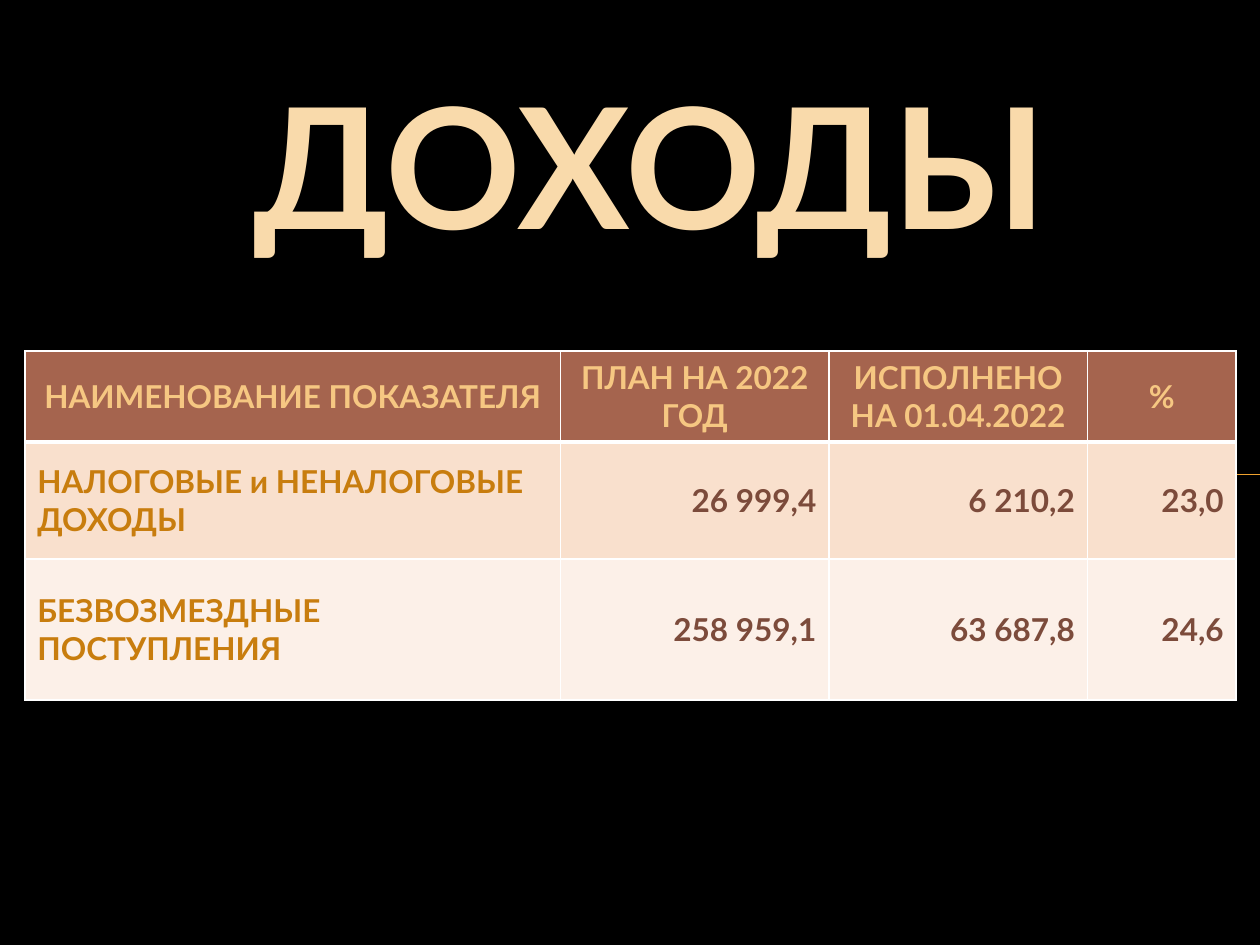
"""Build the slide with the revenue table."""
import lxml.etree
import pptx
import pptx.dml.color
import pptx.enum.shapes
import pptx.enum.text
import pptx.oxml.ns
import pptx.util

Cm = pptx.util.Cm
Pt = pptx.util.Pt
ALIGN = pptx.enum.text.PP_ALIGN
ANCHOR = pptx.enum.text.MSO_ANCHOR
qn = pptx.oxml.ns.qn

FONT = "Lato"
COLORS = {
    "background": "000000",
    "line": "F0A22E",
    "title": "F9DAAB",
    "border": "FFFFFF",
    "header_fill": "A5644E",
    "header_text": "F6C782",
    "label": "C87D0E",
    "number": "7C4B3B",
    "odd_row": "F9E0CD",
    "even_row": "FCF0E8",
}
ROWS = [
    ["НАИМЕНОВАНИЕ ПОКАЗАТЕЛЯ", "ПЛАН НА 2022 ГОД", "ИСПОЛНЕНО НА 01.04.2022", "%"],
    ["НАЛОГОВЫЕ и НЕНАЛОГОВЫЕ ДОХОДЫ", "26 999,4", "6 210,2", "23,0"],
    ["БЕЗВОЗМЕЗДНЫЕ ПОСТУПЛЕНИЯ", "258 959,1", "63 687,8", "24,6"],
]
COLUMN_WIDTHS = [10.8, 5.41, 5.21, 3.0]
ROW_HEIGHTS = [1.83, 2.36, 2.84]


def rgb(name):
    return pptx.dml.color.RGBColor.from_string(COLORS[name])


def write(text_frame, text, size, color, alignment):
    paragraph = text_frame.paragraphs[0]
    paragraph.alignment = alignment
    run = paragraph.add_run()
    run.text = text
    run.font.name = FONT
    run.font.size = Pt(size)
    run.font.bold = True
    run.font.color.rgb = rgb(color)


def add_line(slide):
    y = Cm(9.57)
    connector = slide.shapes.add_connector(
        pptx.enum.shapes.MSO_CONNECTOR.STRAIGHT, Cm(1.42), y, Cm(25.4), y)
    connector.line.color.rgb = rgb("line")
    connector.line.width = Pt(0.75)
    lxml.etree.SubElement(connector._element.spPr, qn("a:effectLst"))


def add_title(slide):
    shape = slide.shapes.add_textbox(Cm(2.31), Cm(1.12), Cm(21.59), Cm(3.78))
    shape.text_frame.word_wrap = True
    shape.text_frame.vertical_anchor = ANCHOR.TOP
    write(shape.text_frame, "ДОХОДЫ", 96, "title", ALIGN.CENTER)


def set_borders(cell, widths):
    properties = cell._tc.get_or_add_tcPr()
    for side, width in widths.items():
        border = lxml.etree.SubElement(properties, qn(f"a:ln{side}"), w=str(Pt(width)))
        fill = lxml.etree.SubElement(border, qn("a:solidFill"))
        lxml.etree.SubElement(fill, qn("a:srgbClr"), val=COLORS["border"])


def fill_cell(cell, text, row, column):
    is_header = row == 0
    if is_header:
        fill, color, alignment = "header_fill", "header_text", ALIGN.CENTER
    else:
        fill = "odd_row" if row % 2 else "even_row"
        color, alignment = ("number", ALIGN.RIGHT) if column else ("label", ALIGN.LEFT)
    top = 3 if row == 1 else 1
    set_borders(cell, {"L": 1, "R": 1, "T": top, "B": 3 if is_header else 1})
    cell.fill.solid()
    cell.fill.fore_color.rgb = rgb(fill)
    cell.vertical_anchor = ANCHOR.MIDDLE
    write(cell.text_frame, text, 18, color, alignment)


def add_revenue_table(slide):
    table = slide.shapes.add_table(
        len(ROWS), len(COLUMN_WIDTHS), Cm(0.5), Cm(7.08),
        Cm(sum(COLUMN_WIDTHS)), Cm(sum(ROW_HEIGHTS))).table
    for column, width in zip(table.columns, COLUMN_WIDTHS):
        column.width = Cm(width)
    for row, height in zip(table.rows, ROW_HEIGHTS):
        row.height = Cm(height)
    for row, texts in enumerate(ROWS):
        for column, text in enumerate(texts):
            fill_cell(table.cell(row, column), text, row, column)


def main():
    presentation = pptx.Presentation()
    presentation.slide_width = Cm(25.4)
    presentation.slide_height = Cm(19.05)
    slide = presentation.slides.add_slide(presentation.slide_layouts[6])
    slide.background.fill.solid()
    slide.background.fill.fore_color.rgb = rgb("background")
    add_line(slide)
    add_title(slide)
    add_revenue_table(slide)
    presentation.save("out.pptx")


if __name__ == "__main__":
    main()
